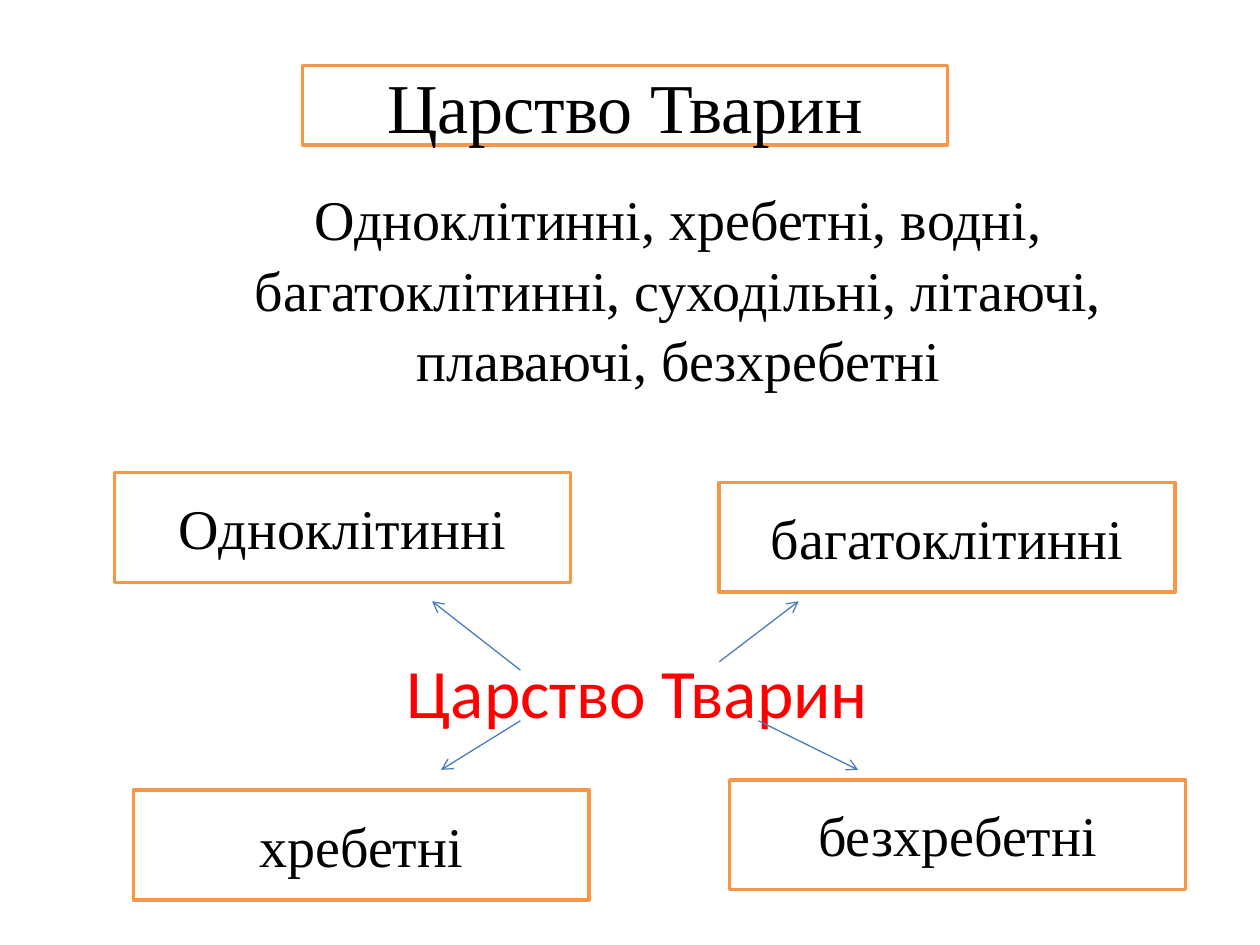
from lxml import etree
from pptx import Presentation
from pptx.dml.color import RGBColor
from pptx.enum.shapes import MSO_CONNECTOR, MSO_SHAPE
from pptx.enum.text import MSO_ANCHOR, PP_ALIGN
from pptx.oxml.ns import qn
from pptx.util import Cm, Pt

RECTANGLE = MSO_SHAPE.RECTANGLE
STRAIGHT = MSO_CONNECTOR.STRAIGHT
CENTER = PP_ALIGN.CENTER
MIDDLE = MSO_ANCHOR.MIDDLE
TOP = MSO_ANCHOR.TOP

COLORS = {
    "text": "000000",
    "kingdom": "FF0000",
    "box": "FFFFFF",
    "border": "F79646",
    "arrow": "4B7EBC",
}
SERIF = "Times New Roman"
SANS = "Calibri"


def color(name):
    return RGBColor.from_string(COLORS[name])


def write(holder, text, size=32, font=SERIF, ink="text", anchor=MIDDLE):
    frame = holder.text_frame
    frame.word_wrap = True
    frame.vertical_anchor = anchor
    paragraph = frame.paragraphs[0]
    paragraph.alignment = CENTER
    run = paragraph.add_run()
    run.text = text
    run.font.size = Pt(size)
    run.font.name = font
    run.font.color.rgb = color(ink)
    return paragraph


prs = Presentation()
prs.slide_width = Cm(25.4)
prs.slide_height = Cm(19.05)
slide = prs.slides.add_slide(prs.slide_layouts[6])
shapes = slide.shapes

kingdom = shapes.add_textbox(Cm(6.85), Cm(12.92), Cm(12), Cm(2))
write(kingdom, "Царство Тварин", size=39.6, font=SANS, ink="kingdom")

traits = shapes.add_textbox(Cm(2.49), Cm(3.53), Cm(21.41), Cm(5.99))
traits.text_frame.margin_left = Cm(1.22)
traits_line = write(
    traits,
    "Одноклітинні, хребетні, водні, багатоклітинні, суходільні, літаючі, плаваючі, безхребетні",
    anchor=TOP,
)
traits_line.line_spacing = 1.05
traits_line.space_before = Pt(2)

groups = [
    ("Царство Тварин", 6.1, 1.32, 13, 1.6, 40),
    ("Одноклітинні", 2.31, 9.53, 9.19, 2.21, 32),
    ("багатоклітинні", 14.5, 9.73, 9.19, 2.21, 32),
    ("хребетні", 2.69, 15.93, 9.19, 2.21, 32),
    ("безхребетні", 14.71, 15.72, 9.19, 2.21, 32),
]
for name, left, top, width, height, size in groups:
    group = shapes.add_shape(RECTANGLE, Cm(left), Cm(top), Cm(width), Cm(height))
    group.shadow.inherit = False
    group.fill.solid()
    group.fill.fore_color.rgb = color("box")
    group.line.color.rgb = color("border")
    group.line.width = Pt(2)
    write(group, name, size=size)

branches = [
    (10.49, 13.51, 8.71, 12.12),
    (14.5, 13.34, 16.1, 12.12),
    (10.49, 14.53, 8.89, 15.52),
    (15.29, 14.53, 17.3, 15.52),
]
for ends in branches:
    branch = shapes.add_connector(STRAIGHT, *map(Cm, ends))
    branch.line.color.rgb = color("arrow")
    branch.line.width = Pt(0.75)
    etree.SubElement(branch.line._get_or_add_ln(), qn("a:tailEnd"), type="arrow")
    etree.SubElement(branch._element.spPr, qn("a:effectLst"))

prs.save("out.pptx")
